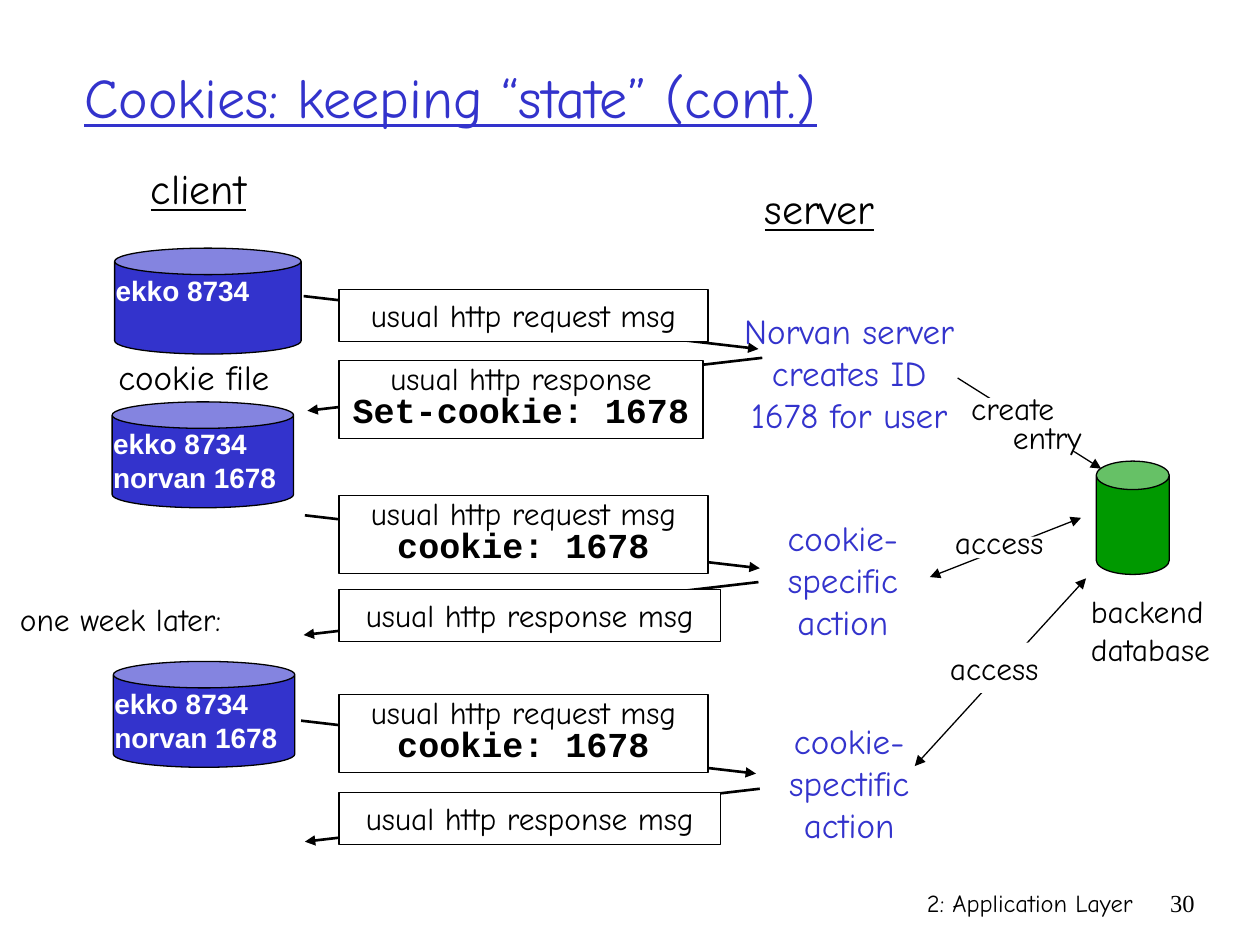
from pptx import Presentation
from pptx.dml.color import RGBColor
from pptx.enum.shapes import MSO_CONNECTOR, MSO_SHAPE
from pptx.enum.text import MSO_ANCHOR, MSO_AUTO_SIZE, PP_ALIGN
from pptx.oxml.ns import qn
from pptx.util import Inches, Pt
from lxml.etree import SubElement

COLORS = {"ink": "000000", "blue": "3333CC", "green": "009900", "white": "FFFFFF"}
HAND, MONO, SANS, SERIF = "Comic Neue", "Courier New", "Arial", "Times New Roman"
LEFT, CENTER, RIGHT = PP_ALIGN.LEFT, PP_ALIGN.CENTER, PP_ALIGN.RIGHT

# Columns of the diagram, in inches
MESSAGE_X, SERVER_X = 2.69, 6.69
ARROW_LENGTH, ARROW_DROP = 3.61, 0.42
ROW_HEIGHT = {1: 0.41, 2: 0.62}

# Content: (lines, box top, box width, client end of arrow x, arrow top, is request)
REQUEST, RESPONSE = "usual http request msg", "usual http response msg"
COOKIE = "cookie: 1678"
MESSAGES = [
    ([REQUEST], 2.3, 2.93, 2.41, 2.35, True),
    (["usual http response", "Set-cookie: 1678"], 2.86, 2.89, 2.44, 2.84, False),
    ([REQUEST, COOKIE], 3.93, 2.93, 2.42, 4.09, True),
    ([RESPONSE], 4.68, 3.03, 2.41, 4.62, False),
    ([REQUEST, COOKIE], 5.51, 2.93, 2.39, 5.72, True),
    ([RESPONSE], 6.29, 3.03, 2.42, 6.26, False),
]
# (lines, left, top, width)
FIRST_ID, SECOND_ID = "ekko 8734", "norvan 1678"
COOKIE_FILES = [
    ([FIRST_ID], 0.91, 1.97, 1.48),
    ([FIRST_ID, SECOND_ID], 0.89, 3.19, 1.44),
    ([FIRST_ID, SECOND_ID], 0.9, 5.25, 1.44),
]
# (lines, centre x, top)
SERVER_ACTIONS = [
    (["Norvan server", "creates ID", "1678 for user"], 6.74, 2.41),
    (["cookie-", "specific", "action"], SERVER_X, 4.05),
    (["cookie-", "spectific", "action"], 6.74, 5.66),
]
# (start, end, arrowhead at both ends, white patch behind the label)
DATABASE_LINKS = [
    ((7.6, 3), (8.74, 3.72), False, (7.76, 3.16, 1.05, 0.42)),
    ((7.38, 4.58), (8.58, 4.11), True, (7.65, 4.26, 0.67, 0.17)),
    ((7.26, 6.08), (8.62, 4.59), True, (7.44, 5.1, 0.97, 0.4)),
]
# (lines, box, size, font, color, alignment, underlined)
LABELS = [
    (["client"], (1.04, 1.24, 1.07, 0.5), 24, HAND, "ink", CENTER, True),
    (["server"], (5.9, 1.4, 1.21, 0.5), 24, HAND, "ink", CENTER, True),
    (["cookie file"], (0.84, 2.77, 1.95, 0.43), 20, HAND, "ink", LEFT, False),
    (["one week later:"], (0.06, 4.71, 1.98, 0.4), 18, HAND, "ink", LEFT, False),
    (["access"], (7.48, 4.1, 0.97, 0.4), 18, HAND, "ink", LEFT, False),
    (["access"], (7.44, 5.1, 0.97, 0.4), 18, HAND, "ink", LEFT, False),
    (["backend", "database"], (8.56, 4.65, 1.26, 0.7), 18, HAND, "ink", LEFT, False),
    (["2: Application Layer"], (5.92, 7, 3.17, 0.5), 14, HAND, "ink", RIGHT, False),
    (["30"], (9.08, 7, 0.5, 0.5), 14, SERIF, "ink", RIGHT, False),
]

presentation = Presentation()
presentation.slide_width, presentation.slide_height = Inches(10), Inches(7.5)
slide = presentation.slides.add_slide(presentation.slide_layouts[6])
shapes = slide.shapes


def color(name):
    return RGBColor.from_string(COLORS[name])


def write(shape, lines, size, font=HAND, ink="ink", align=LEFT, bold=False,
          underline=False, spacing=None, wrap=False):
    frame = shape.text_frame
    frame.text = "\n".join(lines)
    frame.word_wrap = wrap
    frame.vertical_anchor = MSO_ANCHOR.TOP
    for paragraph in frame.paragraphs:
        paragraph.alignment = align
        if spacing:
            paragraph.line_spacing = spacing
        for run in paragraph.runs:
            run.font.name, run.font.size = font, Pt(size)
            run.font.bold, run.font.underline = bold, underline
            run.font.color.rgb = color(ink)
    return frame


def add_text(lines, box, size, **style):
    return write(shapes.add_textbox(*map(Inches, box)), lines, size, **style)


def add_filled(kind, box, fill, outlined=True):
    shape = shapes.add_shape(kind, *map(Inches, box))
    shape.shadow.inherit = False
    shape.fill.solid()
    shape.fill.fore_color.rgb = color(fill)
    if outlined:
        shape.line.color.rgb = color("ink")
        shape.line.width = Pt(0.75)
    else:
        shape.line.fill.background()
    return shape


def add_arrow(start, end, width, both=False):
    arrow = shapes.add_connector(MSO_CONNECTOR.STRAIGHT, *map(Inches, start + end))
    arrow.line.color.rgb = color("ink")
    arrow.line.width = Pt(width)
    line = arrow.line._get_or_add_ln()
    for tag in ["a:headEnd", "a:tailEnd"] if both else ["a:tailEnd"]:
        SubElement(line, qn(tag), type="triangle")
    SubElement(arrow._element.spPr, qn("a:effectLst"))


# Title
title = add_text(["Cookies: keeping “state” (cont.)"], (0.57, 0.14, 8.5, 1.25), 32,
                 ink="blue", underline=True, wrap=True)
title.vertical_anchor = MSO_ANCHOR.MIDDLE

# Messages: each arrow passes behind its box
for lines, top, width, client_x, arrow_top, is_request in MESSAGES:
    client_y, server_y = arrow_top, arrow_top + ARROW_DROP
    if not is_request:
        client_y, server_y = server_y, client_y
    client, server = (client_x, client_y), (client_x + ARROW_LENGTH, server_y)
    add_arrow(*((client, server) if is_request else (server, client)), 1.5)
    box = add_filled(MSO_SHAPE.RECTANGLE,
                     (MESSAGE_X, top, width, ROW_HEIGHT[len(lines)]), "white")
    frame = write(box, lines, 18, align=CENTER, wrap=True,
                  spacing=0.8 if len(lines) > 1 else None)
    frame.auto_size = MSO_AUTO_SIZE.SHAPE_TO_FIT_TEXT
    for paragraph in frame.paragraphs[1:]:
        font = paragraph.runs[0].font
        font.name, font.size, font.bold = MONO, Pt(20), True

# Cookie files on the client
for lines, left, top, width in COOKIE_FILES:
    can = add_filled(MSO_SHAPE.CAN, (left, top, width, 0.84), "blue")
    can.adjustments[0] = 0.25
    add_text(lines, (left - 0.09, top + 0.15, 1.74, 0.64), 16, font=SANS,
             ink="white", bold=True)

# Server actions
for lines, center, top in SERVER_ACTIONS:
    add_text(lines, (center - 1, top, 2, 1.1), 20, ink="blue", align=CENTER)

# Backend database and its links
database = add_filled(MSO_SHAPE.CAN, (8.7, 3.66, 0.58, 0.9), "green")
database.adjustments[0] = 0.39
for start, end, both, patch in DATABASE_LINKS:
    add_arrow(start, end, 0.75, both)
    add_filled(MSO_SHAPE.RECTANGLE, patch, "white", outlined=False)
entry = add_text(["create", "entry"], (7.61, 3.11, 1.28, 0.55), 18,
                 spacing=0.75, wrap=True)
entry.paragraphs[1]._p.get_or_add_pPr().set("marL", str(Inches(0.33)))

# Labels and footer
for lines, box, size, font, ink, align, underline in LABELS:
    add_text(lines, box, size, font=font, ink=ink, align=align, underline=underline)

presentation.save("out.pptx")
